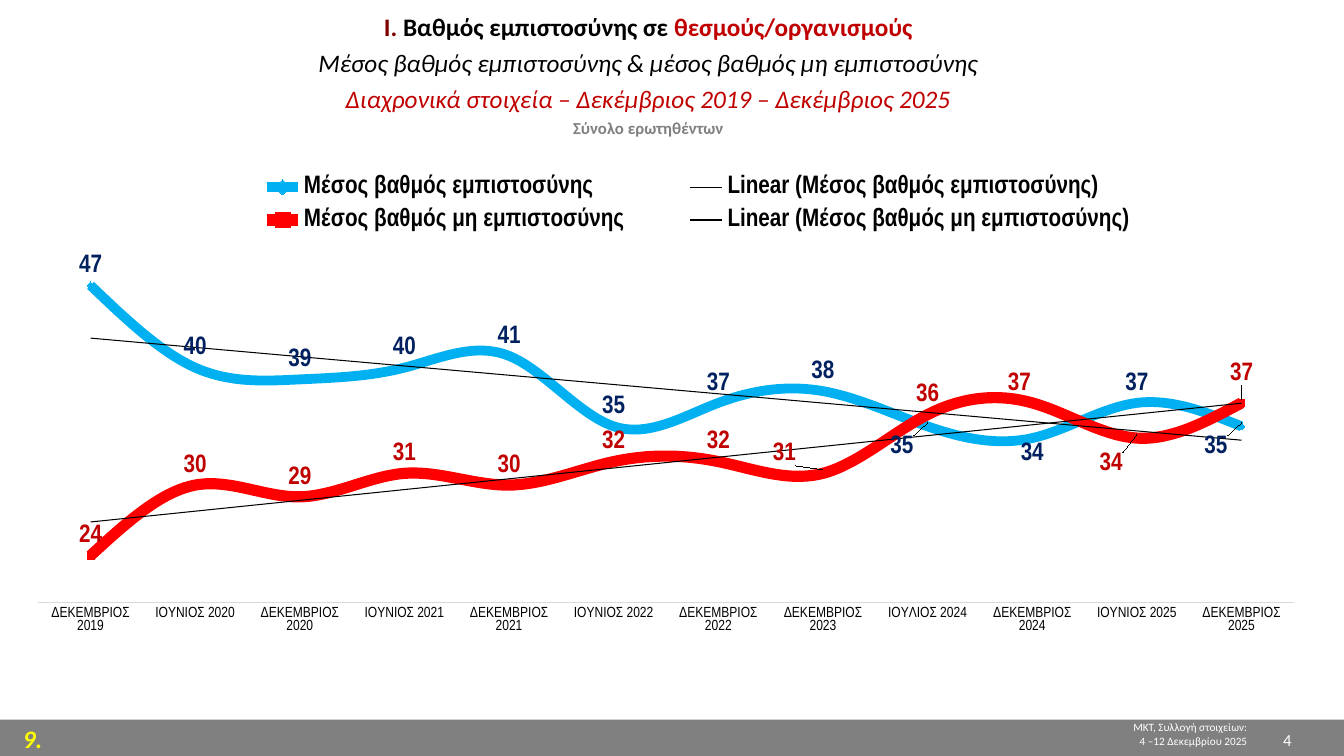
import pptx
import pptx.chart.data
import pptx.dml.color
import pptx.enum.chart
import pptx.enum.shapes
import pptx.enum.text
import pptx.oxml
import pptx.oxml.ns
import pptx.util

Inches = pptx.util.Inches
Pt = pptx.util.Pt
RGBColor = pptx.dml.color.RGBColor
Align = pptx.enum.text.PP_ALIGN
Marker = pptx.enum.chart.XL_MARKER_STYLE

WHITE = RGBColor(0xFF, 0xFF, 0xFF)
BLACK = RGBColor(0, 0, 0)
GRAY = RGBColor(0x80, 0x80, 0x80)
LIGHT_GRAY = RGBColor(0xD9, 0xD9, 0xD9)
YELLOW = RGBColor(0xFF, 0xFF, 0)
MAROON = RGBColor(0x80, 0, 0)
DARK_RED = RGBColor(0xC0, 0, 0)
RED = RGBColor(0xFF, 0, 0)
BLUE = RGBColor(0, 0xB0, 0xF0)
NAVY = RGBColor(0, 0x20, 0x60)

MONTHS = ["ΔΕΚΕΜΒΡΙΟΣ 2019", "ΙΟΥΝΙΟΣ 2020", "ΔΕΚΕΜΒΡΙΟΣ 2020", "IOYNIOΣ 2021",
          "ΔΕΚΕΜΒΡΙΟΣ 2021", "IOYNIOΣ 2022", "ΔΕΚΕΜΒΡΙΟΣ 2022", "ΔΕΚΕΜΒΡΙΟΣ 2023",
          "ΙΟΥΛΙΟΣ 2024", "ΔΕΚΕΜΒΡΙΟΣ 2024", "ΙΟΥNΙΟΣ 2025", "ΔΕΚΕΜΒΡΙΟΣ 2025"]

# Label shifts are fractions of the chart size, by point
TRUST = dict(name="Μέσος βαθμός εμπιστοσύνης",
             values=[47, 40, 39, 40, 41, 35, 37, 38, 35, 34, 37, 35],
             color=BLUE, width=7, marker=Marker.DIAMOND, label_color=NAVY,
             shifts={8: (-0.02, 0.08), 9: (0, 0.07), 11: (-0.02, 0.08)})
DISTRUST = dict(name="Μέσος βαθμός μη εμπιστοσύνης",
                values=[24, 30, 29, 31, 30, 32, 32, 31, 36, 37, 34, 37],
                color=RED, width=8, marker=Marker.SQUARE, label_color=DARK_RED,
                shifts={7: (-0.03, 0), 9: (-0.01, 0), 10: (-0.02, 0.09), 11: (0, -0.02)})

TRENDLINE = ('<a:ln w="9525"><a:solidFill><a:srgbClr val="000000"/></a:solidFill></a:ln>'
             '</c:spPr><c:trendlineType val="linear"/><c:dispRSqr val="0"/><c:dispEq val="0"/>')


def chart_element(tag, content):
    namespaces = pptx.oxml.ns.nsdecls("c", "a")
    return pptx.oxml.parse_xml(f"<c:{tag} {namespaces}>{content}</c:{tag}>")


def manual_layout(**settings):
    content = "".join(f'<c:{key} val="{value}"/>' for key, value in settings.items())
    return chart_element("layout", f"<c:manualLayout>{content}</c:manualLayout>")


def set_font(font, size, color, bold=False, italic=False, name="Calibri"):
    font.size, font.bold, font.italic, font.name = Pt(size), bold, italic, name
    font.color.rgb = color


def write(paragraph, text, **style):
    run = paragraph.add_run()
    run.text = text
    set_font(run.font, **style)


class TrustSlide:
    chart_font = "Arial Narrow"

    def __init__(self, presentation):
        self.slide = presentation.slides.add_slide(presentation.slide_layouts[6])

    def bar(self, left, top, width, height, color):
        shape = self.slide.shapes.add_shape(
            pptx.enum.shapes.MSO_SHAPE.RECTANGLE,
            Inches(left), Inches(top), Inches(width), Inches(height))
        shape.shadow.inherit = False
        shape.fill.solid()
        shape.fill.fore_color.rgb = color
        shape.line.fill.background()

    def text(self, left, top, width, height, lines, align, spacing=None):
        """Each line is a list of (text, style) runs."""
        box = self.slide.shapes.add_textbox(
            Inches(left), Inches(top), Inches(width), Inches(height))
        frame = box.text_frame
        frame.word_wrap = True
        for number, line in enumerate(lines):
            paragraph = frame.add_paragraph() if number else frame.paragraphs[0]
            paragraph.alignment = align
            if spacing:
                paragraph.line_spacing = spacing
            for text, style in line:
                write(paragraph, text, **style)

    def line_chart(self, left, top, width, height, categories, lines):
        data = pptx.chart.data.CategoryChartData(number_format="#,##0")
        data.categories = categories
        for line in lines:
            data.add_series(line["name"], line["values"])
        chart = self.slide.shapes.add_chart(
            pptx.enum.chart.XL_CHART_TYPE.LINE_MARKERS,
            Inches(left), Inches(top), Inches(width), Inches(height), data).chart
        chart.has_title = False
        set_font(chart.font, 9, BLACK, name=self.chart_font)
        self.axes(chart)
        self.legend(chart)
        chart.plots[0].vary_by_categories = False
        for series, line in zip(chart.plots[0].series, lines):
            self.series(series, line)

        # Fixed plot area
        plot_area = chart.plots[0]._element.getparent()
        for layout in plot_area.findall(pptx.oxml.ns.qn("c:layout")):
            plot_area.remove(layout)
        plot_area.insert(0, manual_layout(layoutTarget="inner", xMode="edge", yMode="edge",
                                          x=0.007, y=0.188, w=0.976, h=0.705))

    def axes(self, chart):
        months, values = chart.category_axis, chart.value_axis
        months.major_tick_mark = pptx.enum.chart.XL_TICK_MARK.NONE
        months.format.line.color.rgb = LIGHT_GRAY
        months.format.line.width = Pt(0.75)
        set_font(months.tick_labels.font, 10.5, BLACK, name=self.chart_font)
        values.minimum_scale, values.maximum_scale = 20, 50
        values.has_major_gridlines = False
        values.visible = False

    def legend(self, chart):
        chart.has_legend = True
        legend = chart.legend
        legend.position = pptx.enum.chart.XL_LEGEND_POSITION.TOP
        legend.include_in_layout = False
        set_font(legend.font, 18, BLACK, bold=True, name=self.chart_font)
        position = legend._element.find(pptx.oxml.ns.qn("c:legendPos"))
        for layout in legend._element.findall(pptx.oxml.ns.qn("c:layout")):
            legend._element.remove(layout)
        position.addnext(manual_layout(xMode="edge", yMode="edge",
                                       x=0.14, y=0.02, w=0.76, h=0.15))

    def series(self, series, line):
        series.smooth = True
        series.format.line.color.rgb = line["color"]
        series.format.line.width = Pt(line["width"])
        series.marker.style, series.marker.size = line["marker"], 5
        series.marker.format.fill.solid()
        series.marker.format.fill.fore_color.rgb = line["color"]
        series.marker.format.line.color.rgb = line["color"]

        # Value labels, some of them moved
        above = pptx.enum.chart.XL_LABEL_POSITION.ABOVE
        label_style = dict(size=18, color=line["label_color"], bold=True, name=self.chart_font)
        labels = series.data_labels
        labels.show_value = True
        labels.number_format, labels.number_format_is_linked = "#,##0", False
        labels.position = above
        set_font(labels.font, **label_style)
        for index, (x, y) in line["shifts"].items():
            label = series.points[index].data_label
            set_font(label.font, **label_style)
            label.position = above
            element = labels._element.xpath(f"c:dLbl[c:idx/@val={index}]")[0]
            element.insert(1, manual_layout(x=x, y=y))

        # Linear trend
        categories = series._element.find(pptx.oxml.ns.qn("c:cat"))
        categories.addprevious(chart_element("trendline", "<c:spPr>" + TRENDLINE))


def main():
    presentation = pptx.Presentation()
    presentation.slide_width, presentation.slide_height = Inches(13.33), Inches(7.5)
    page = TrustSlide(presentation)

    # Footer
    small = dict(size=8, color=WHITE)
    page.bar(0, 7.14, 13.33, 0.36, GRAY)
    page.text(9.58, 7.1, 2.89, 0.37, [[("MKT, Συλλογή στοιχείων:", small)],
                                      [("4 –12 Δεκεμβρίου 2025", small)]], Align.RIGHT)
    page.text(0.13, 7.13, 0.67, 0.37,
              [[("9.", dict(size=18, color=YELLOW, bold=True, italic=True))]], Align.LEFT)
    page.text(10.13, 7.19, 2.78, 0.31, [[("4", dict(size=12, color=WHITE))]], Align.RIGHT)

    # Title
    title = dict(size=18, bold=True)
    subtitle = dict(size=18, italic=True)
    page.text(2.18, 0, 8.5, 1.25, [
        [("I. ", dict(title, color=MAROON)),
         ("Βαθμός εμπιστοσύνης σε ", dict(title, color=BLACK)),
         ("θεσμούς/οργανισμούς", dict(title, color=DARK_RED))],
        [("Μέσος βαθμός εμπιστοσύνης & μέσος βαθμός μη εμπιστοσύνης",
          dict(subtitle, color=BLACK))],
        [("Διαχρονικά στοιχεία – Δεκέμβριος 2019 – Δεκέμβριος 2025",
          dict(subtitle, color=DARK_RED))],
        [("Σύνολο ερωτηθέντων", dict(size=12, color=GRAY, bold=True))],
    ], Align.CENTER, spacing=1.2)

    # Chart
    page.line_chart(0.29, 1.55, 12.76, 4.96, MONTHS, [TRUST, DISTRUST])
    presentation.save("out.pptx")


if __name__ == "__main__":
    main()
